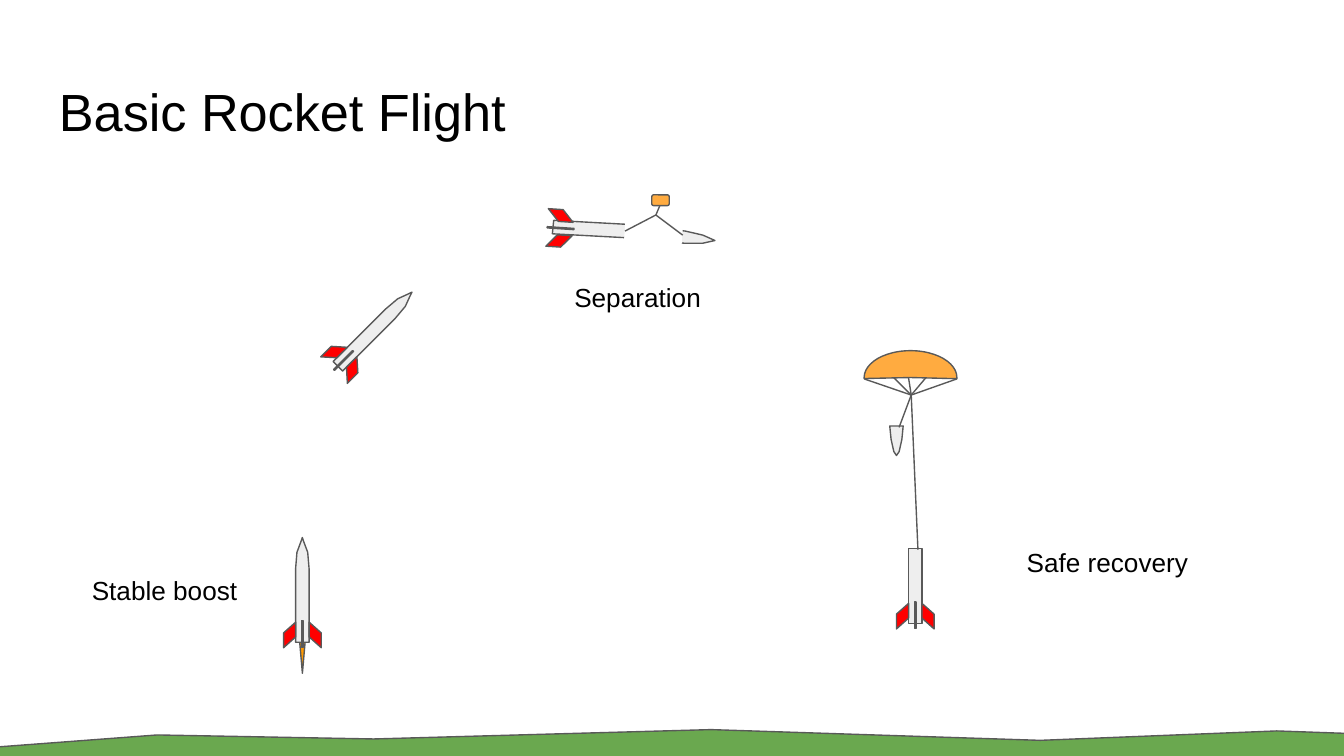
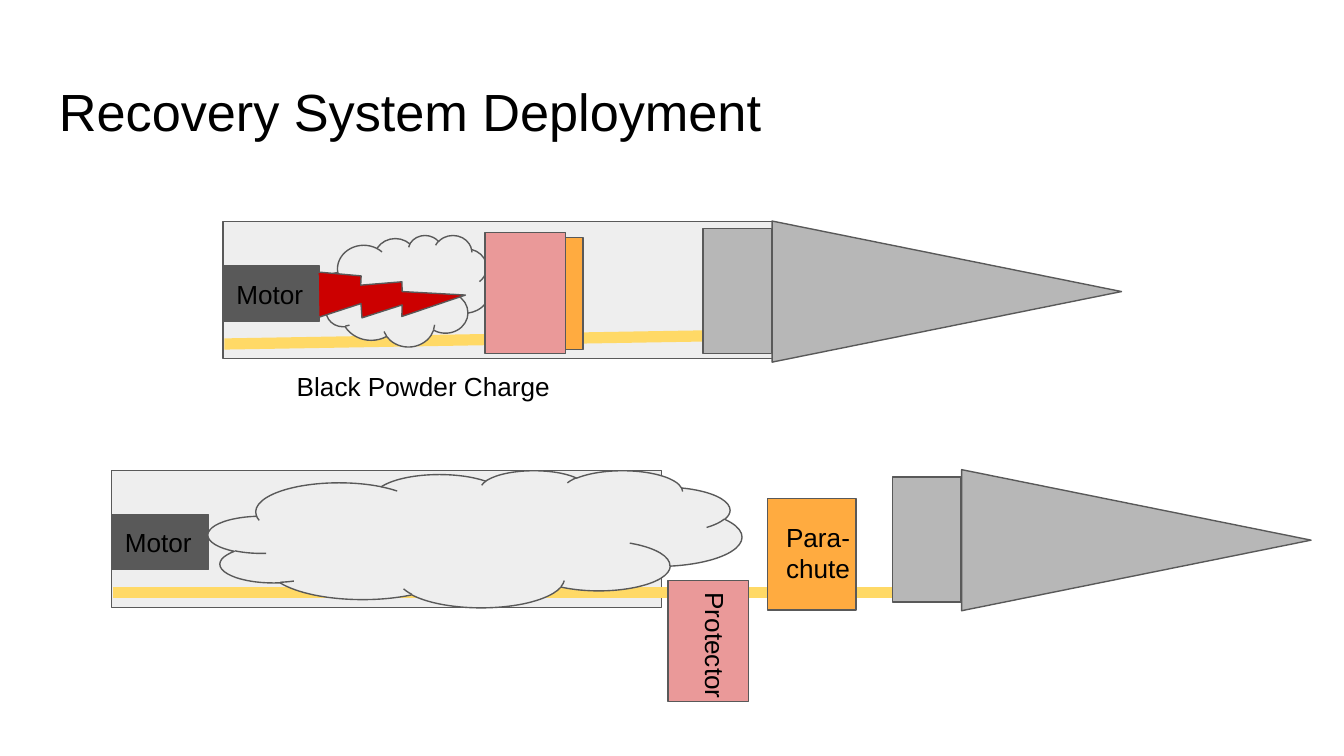
import math

from lxml import etree
from pptx import Presentation
from pptx.dml.color import RGBColor
from pptx.enum.shapes import MSO_CONNECTOR, MSO_SHAPE
from pptx.enum.text import MSO_ANCHOR, PP_ALIGN
from pptx.oxml.ns import qn
from pptx.util import Cm, Pt

RECTANGLE = MSO_SHAPE.RECTANGLE
ROUNDED = MSO_SHAPE.ROUNDED_RECTANGLE
TRIANGLE = MSO_SHAPE.ISOSCELES_TRIANGLE
CLOUD = MSO_SHAPE.CLOUD
BOLT = MSO_SHAPE.LIGHTNING_BOLT
PIE = MSO_SHAPE.PIE
STRAIGHT = MSO_CONNECTOR.STRAIGHT
TOP, MIDDLE = MSO_ANCHOR.TOP, MSO_ANCHOR.MIDDLE
LEFT, CENTER = PP_ALIGN.LEFT, PP_ALIGN.CENTER

BLACK, WHITE = "000000", "FFFFFF"
OUTLINE = "595959"
BODY, NOSE = "EEEEEE", "B7B7B7"
FIN, FLAME, BLAST = "FF0000", "FF9900", "CC0000"
CHUTE, PROTECTOR, CORD = "FFAB40", "EA9999", "FFD966"
GRASS = "6AA84F"
CM_PER_INCH = 2.54


def length(inches):
    return Cm(inches * CM_PER_INCH)


def color(hex_code):
    return RGBColor.from_string(hex_code)


def paint(shape, fill, line=OUTLINE):
    shape.shadow.inherit = False
    shape.fill.solid()
    shape.fill.fore_color.rgb = color(fill)
    shape.line.color.rgb = color(line)
    shape.line.width = Pt(0.75)


def write(shape, text, size=14, align=LEFT, anchor=TOP, inset=0.1, wrap=True):
    """Put one black Arial paragraph into a shape; inset is top and bottom."""
    frame = shape.text_frame
    frame.word_wrap = wrap
    frame.vertical_anchor = anchor
    frame.margin_left = frame.margin_right = length(0.1)
    frame.margin_top = frame.margin_bottom = length(inset)
    paragraph = frame.paragraphs[0]
    paragraph.text = text
    paragraph.alignment = align
    paragraph.font.name = "Arial"
    paragraph.font.size = Pt(size)
    paragraph.font.color.rgb = color(BLACK)


def add_label(slide, text, box, rotation=0, **style):
    shape = slide.shapes.add_textbox(*map(length, box))
    shape.rotation = rotation
    write(shape, text, **style)


def add_part(slide, kind, box, fill, line=OUTLINE, rotation=0, adjustments=()):
    shape = slide.shapes.add_shape(kind, *map(length, box))
    shape.rotation = rotation
    for index, value in enumerate(adjustments):
        shape.adjustments[index] = value
    paint(shape, fill, line)
    return shape


def add_line(slide, start, end, line=OUTLINE, width=0.75):
    connector = slide.shapes.add_connector(
        STRAIGHT, *map(length, (*start, *end)))
    connector.line.color.rgb = color(line)
    connector.line.width = Pt(width)
    etree.SubElement(connector._element.spPr, qn("a:effectLst"))


def add_outline(slide, points, fill):
    corners = [(length(x), length(y)) for x, y in points]
    builder = slide.shapes.build_freeform(*corners[0])
    builder.add_line_segments(corners[1:], close=True)
    shape = builder.convert_to_shape()
    paint(shape, fill)
    return shape


def turn(shape, center, angle):
    """Move a shape drawn around (0, 0) to center, turned clockwise."""
    x = shape.left + shape.width / 2
    y = shape.top + shape.height / 2
    cosine, sine = math.cos(math.radians(angle)), math.sin(math.radians(angle))
    shape.left = round(length(center[0]) + x * cosine - y * sine - shape.width / 2)
    shape.top = round(length(center[1]) + x * sine + y * cosine - shape.height / 2)
    shape.rotation = angle


def mirrored(half):
    """Complete the left half of an outline with its right half."""
    return half + [(-x, y) for x, y in reversed(half) if x]


def add_hull(slide, center, half, angle=0):
    turn(add_outline(slide, mirrored(half), BODY), center, angle)


def add_fins(slide, center, angle=0):
    for side in (-1, 1):
        fin = [(side * x, y) for x, y in
               ((0.05, 0.24), (0.14, 0.32), (0.14, 0.43), (0.05, 0.35))]
        turn(add_outline(slide, fin, FIN), center, angle)
    width = 0.01
    middle_fin = add_part(slide, RECTANGLE, (-width / 2, 0.23, width, 0.2), BODY)
    turn(middle_fin, center, angle)


def add_rocket(slide, center, angle=0):
    half = [(-0.05, 0.39), (-0.05, -0.16), (-0.04, -0.28),
            (-0.01, -0.36), (0, -0.39)]
    add_hull(slide, center, half, angle)
    add_fins(slide, center, angle)


def add_separation(slide):
    add_outline(slide, [(4.12, 1.64), (4.67, 1.67), (5.1, 1.72), (5.23, 1.75),
                        (5.32, 1.79), (5.23, 1.81), (5.09, 1.81),
                        (4.67, 1.77), (4.11, 1.74)], BODY)
    add_fins(slide, (4.5, 1.72), 93.7)
    add_part(slide, RECTANGLE, (4.65, 1.52, 0.42, 0.52), WHITE, WHITE, 4)
    add_part(slide, ROUNDED, (4.85, 1.45, 0.13, 0.08), CHUTE,
             adjustments=[0.17])
    knot = (4.88, 1.6)
    for end in ((4.65, 1.72), (5.08, 1.75), (4.91, 1.53)):
        add_line(slide, end, knot)


def add_descent(slide):
    add_hull(slide, (6.81, 4.25), [(-0.05, 0.39), (-0.05, -0.17)])
    add_fins(slide, (6.81, 4.25))
    nose = [(-0.05, 0.11), (-0.04, 0.01), (-0.02, -0.08), (0, -0.11)]
    add_hull(slide, (6.67, 3.28), nose, 180)
    knot = (6.78, 2.94)
    for end in ((6.83, 4.09), (6.69, 3.18)):
        add_line(slide, knot, end)
    add_part(slide, PIE, (6.43, 2.61, 0.69, 0.4), CHUTE,
             adjustments=[107.24, 0.86])
    for end in ((7.12, 2.82), (6.43, 2.82), (6.76, 2.81),
                (6.89, 2.81), (6.65, 2.81)):
        add_line(slide, end, knot)


def add_titled_slide(presentation, title):
    slide = presentation.slides.add_slide(presentation.slide_layouts[6])
    add_label(slide, title, (0.34, 0.49, 9.32, 0.63), size=28)
    return slide


def add_flight_slide(presentation):
    slide = add_titled_slide(presentation, "Basic Rocket Flight")
    add_outline(slide, [(-0.03, 5.56), (1.17, 5.47), (2.78, 5.5), (5.29, 5.43),
                        (7.74, 5.51), (9.5, 5.44), (10.07, 5.46),
                        (10.07, 5.8), (-0.01, 5.8)], GRASS)
    add_part(slide, TRIANGLE, (2.23, 4.78, 0.04, 0.23), FLAME, rotation=180)
    add_rocket(slide, (2.25, 4.39))
    add_rocket(slide, (2.79, 2.45), 45)
    add_separation(slide)
    add_descent(slide)
    for text, box in (("Stable boost", (0.54, 4.19, 1.37, 0.4)),
                      ("Safe recovery", (7.47, 4, 1.54, 0.37)),
                      ("Separation", (4.06, 2.01, 1.37, 0.4))):
        add_label(slide, text, box, align=CENTER, anchor=MIDDLE)


def add_stage(slide, tube, nose_left, cord_end, chute, cloud, protector):
    """Draw one cutaway rocket; tube, chute and protector are corners."""
    left, top = tube
    add_part(slide, RECTANGLE, (left, top, 4.09, 1.02), BODY)
    motor = add_part(slide, RECTANGLE, (left, top + 0.33, 0.72, 0.41), OUTLINE)
    write(motor, "Motor", anchor=MIDDLE)
    add_line(slide, (left + 0.01, top + 0.91), cord_end, CORD, 6)
    add_part(slide, RECTANGLE, (*chute, 0.66, 0.83), CHUTE)
    add_part(slide, RECTANGLE, (nose_left, top + 0.05, 0.51, 0.93), NOSE)
    add_part(slide, TRIANGLE, (nose_left + 1.29, top - 0.78, 1.05, 2.6),
             NOSE, rotation=90)
    add_part(slide, CLOUD, cloud, BODY)
    add_part(slide, RECTANGLE, (*protector, 0.6, 0.9), PROTECTOR)


def add_deployment_slide(presentation):
    slide = add_titled_slide(presentation, "Recovery System Deployment")
    add_stage(slide, tube=(1.66, 1.65), nose_left=5.23, cord_end=(5.23, 2.5),
              chute=(3.68, 1.77), cloud=(2.4, 1.75, 1.25, 0.83),
              protector=(3.61, 1.73))
    add_part(slide, BOLT, (2.48, 1.72, 0.72, 1.02), BLAST, rotation=302.1)
    add_stage(slide, tube=(0.83, 3.5), nose_left=6.64, cord_end=(6.67, 4.41),
              chute=(5.71, 3.71), cloud=(1.55, 3.5, 3.97, 1.02),
              protector=(4.97, 4.32))
    add_label(slide, "Black Powder Charge", (2.11, 2.71, 2.1, 0.34),
              inset=0.05, wrap=False)
    add_label(slide, "Para-chute", (5.75, 3.83, 0.81, 0.57), inset=0.05)
    add_label(slide, "Protector", (4.76, 4.7, 1.12, 0.34), rotation=90,
              inset=0.05)


def main():
    presentation = Presentation()
    presentation.slide_width = Cm(25.4)
    presentation.slide_height = Cm(14.29)
    add_flight_slide(presentation)
    add_deployment_slide(presentation)
    presentation.save("out.pptx")


if __name__ == "__main__":
    main()
